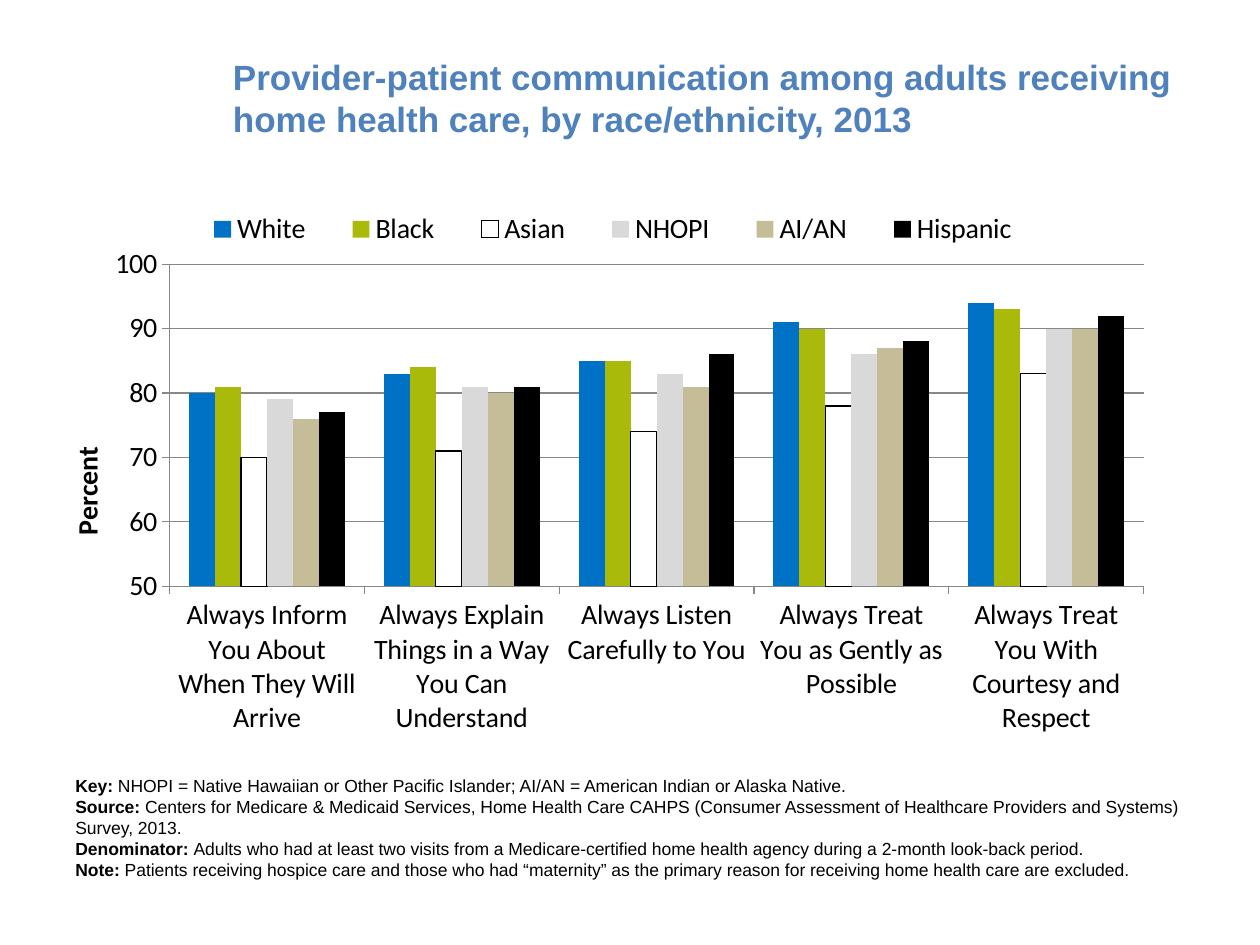
from pptx import Presentation
from pptx.chart.data import CategoryChartData
from pptx.dml.color import RGBColor
from pptx.enum.chart import XL_CHART_TYPE, XL_LEGEND_POSITION, XL_TICK_MARK
from pptx.enum.text import MSO_ANCHOR
from pptx.oxml import parse_xml
from pptx.oxml.ns import nsdecls, qn
from pptx.util import Inches, Pt

COLUMNS = XL_CHART_TYPE.COLUMN_CLUSTERED
TOP = XL_LEGEND_POSITION.TOP
OUTSIDE = XL_TICK_MARK.OUTSIDE
MIDDLE = MSO_ANCHOR.MIDDLE

COLORS = {
    "title": "4F81BD", "text": "000000", "grid": "878787",
    "White": "0072C6", "Black": "AABA0A", "Asian": "FFFFFF",
    "NHOPI": "D9D9D9", "AI/AN": "C4BD97", "Hispanic": "000000",
}

TITLE = ("Provider-patient communication among adults receiving "
         "home health care, by race/ethnicity, 2013")
CATEGORIES = [
    "Always Inform You About When They Will Arrive",
    "Always Explain Things in a Way You Can Understand",
    "Always Listen Carefully to You",
    "Always Treat You as Gently as Possible",
    "Always Treat You With Courtesy and Respect",
]
PERCENTS = {
    "White": [80, 83, 85, 91, 94],
    "Black": [81, 84, 85, 90, 93],
    "Asian": [70, 71, 74, 78, 83],
    "NHOPI": [79, 81, 83, 86, 90],
    "AI/AN": [76, 80, 81, 87, 90],
    "Hispanic": [77, 81, 86, 88, 92],
}
NOTES = [
    ("Key: ", "NHOPI = Native Hawaiian or Other Pacific Islander; "
              "AI/AN = American Indian or Alaska Native."),
    ("Source: ", "Centers for Medicare & Medicaid Services, Home Health Care CAHPS "
                 "(Consumer Assessment of Healthcare Providers and Systems) Survey, 2013."),
    ("Denominator: ", "Adults who had at least two visits from a Medicare-certified "
                      "home health agency during a 2-month look-back period."),
    ("Note: ", "Patients receiving hospice care and those who had “maternity” as the "
               "primary reason for receiving home health care are excluded."),
]


def rgb(name):
    return RGBColor.from_string(COLORS[name])


def set_layout(element, index, x, y, w, h, inner=False):
    """Place a chart part by fractions of the chart area."""
    old = element.find(qn("c:layout"))
    if old is not None:
        element.remove(old)
    target = '<c:layoutTarget val="inner"/>' if inner else ""
    modes = '<c:xMode val="edge"/><c:yMode val="edge"/>'
    sizes = "".join(f'<c:{tag} val="{val}"/>'
                    for tag, val in zip("xywh", (x, y, w, h)))
    element.insert(index, parse_xml(
        f'<c:layout {nsdecls("c")}><c:manualLayout>{target}{modes}{sizes}'
        '</c:manualLayout></c:layout>'))


class SlideBuilder:
    text_font = "Arial"
    chart_font = "Calibri"
    chart_size = 16

    def __init__(self, slide):
        self.s = slide

    def style(self, font, name, size, color="text", bold=False):
        font.name, font.size, font.bold = name, Pt(size), bold
        font.color.rgb = rgb(color)

    def text(self, box, paragraphs, size, color="text", anchor=None):
        """Each paragraph is a list of (text, bold) runs."""
        tf = self.s.shapes.add_textbox(*map(Inches, box)).text_frame
        tf.word_wrap = True
        tf.vertical_anchor = anchor
        for i, runs in enumerate(paragraphs):
            p = tf.add_paragraph() if i else tf.paragraphs[0]
            for text, bold in runs:
                r = p.add_run()
                r.text = text
                self.style(r.font, self.text_font, size, color, bold)

    def column_chart(self, box, categories, series, axis_title):
        data = CategoryChartData(number_format="0")
        data.categories = categories
        for name, values in series.items():
            data.add_series(name, values)
        chart = self.s.shapes.add_chart(COLUMNS, *map(Inches, box), data).chart
        self.style(chart.font, self.chart_font, self.chart_size)
        chart.has_title = False

        plot = chart.plots[0]
        plot.gap_width, plot.overlap = 150, 0
        plot.vary_by_categories = False
        for ser in plot.series:
            ser.invert_if_negative = False
            ser.format.fill.solid()
            ser.format.fill.fore_color.rgb = rgb(ser.name)
            if ser.name == "Asian":
                ser.format.line.color.rgb = rgb("text")
                ser.format.line.width = Pt(0.75)
        set_layout(chart.plots[0]._element.getparent(), 0,
                   0.094, 0.113, 0.859, 0.581, inner=True)

        self.axes(chart, axis_title)
        chart.has_legend = True
        legend = chart.legend
        legend.position, legend.include_in_layout = TOP, False
        self.style(legend.font, self.chart_font, self.chart_size)
        set_layout(legend._element, 1, 0.1, 0.01, 0.77, 0.08)

    def axes(self, chart, title):
        value = chart.value_axis
        for axis in (chart.category_axis, value):
            axis.major_tick_mark = OUTSIDE
            axis.format.line.color.rgb = rgb("grid")
            self.style(axis.tick_labels.font, self.chart_font, self.chart_size)
        value.minimum_scale, value.maximum_scale, value.major_unit = 50, 100, 10
        value.tick_labels.number_format = "0"
        value.tick_labels.number_format_is_linked = False
        value.has_major_gridlines = True
        value.major_gridlines.format.line.color.rgb = rgb("grid")
        tf = value.axis_title.text_frame
        tf.text = title
        self.style(tf.paragraphs[0].runs[0].font,
                   self.chart_font, self.chart_size, bold=True)


def main():
    prs = Presentation()
    prs.slide_width, prs.slide_height = Inches(10), Inches(7.5)
    s = SlideBuilder(prs.slides.add_slide(prs.slide_layouts[6]))
    s.text((1.75, 0.3, 7.75, 0.95), [[(TITLE, True)]], 20, "title", MIDDLE)
    s.column_chart((0.5, 1.6, 9, 4.4), CATEGORIES, PERCENTS, "Percent")
    s.text((0.5, 6.1, 9, 0.94),
           [[(label, True), (note, False)] for label, note in NOTES], 10)
    prs.save("out.pptx")


if __name__ == "__main__":
    main()
